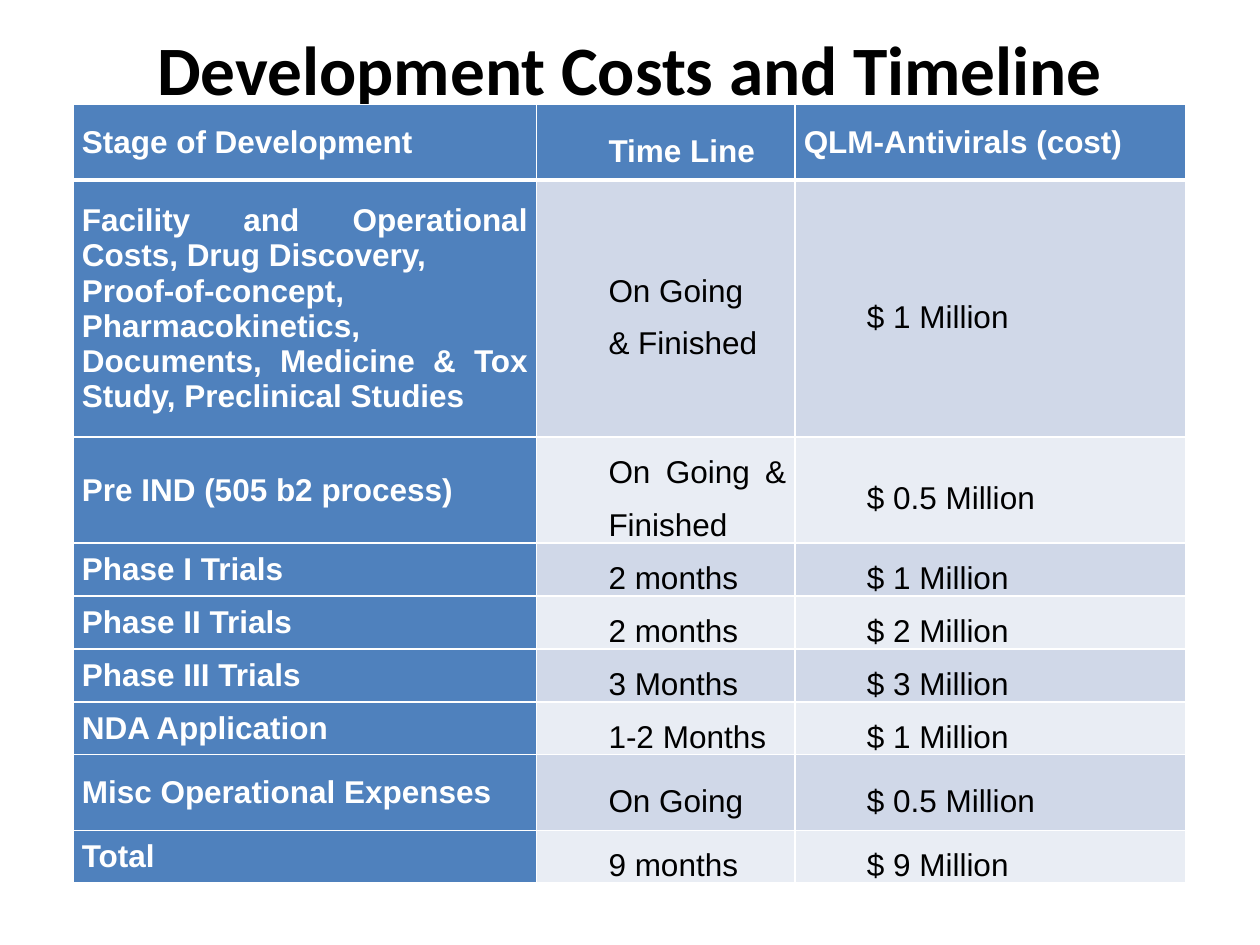
import lxml.etree
import pptx
import pptx.dml.color
import pptx.enum.text
import pptx.oxml.ns
import pptx.util

Inches = pptx.util.Inches
Pt = pptx.util.Pt
RGBColor = pptx.dml.color.RGBColor
ALIGN = pptx.enum.text.PP_ALIGN
MIDDLE = pptx.enum.text.MSO_ANCHOR.MIDDLE
qn = pptx.oxml.ns.qn

BLUE = RGBColor(0x4F, 0x81, 0xBD)
BANDS = [RGBColor(0xE9, 0xED, 0xF4), RGBColor(0xD0, 0xD8, 0xE8)]
WHITE = RGBColor(255, 255, 255)
BLACK = RGBColor(0, 0, 0)

HEADING = "Development Costs and Timeline"
HEADER = ("Stage of Development", "Time Line", "QLM-Antivirals (cost)")
STAGES = [
    ("Facility and Operational Costs, Drug Discovery,\nProof-of-concept,\n"
     "Pharmacokinetics,\nDocuments, Medicine & Tox Study, Preclinical Studies",
     "On Going\n& Finished", "$ 1 Million"),
    ("Pre IND (505 b2 process)", "On Going & Finished", "$ 0.5 Million"),
    ("Phase I Trials", "2 months", "$ 1 Million"),
    ("Phase II Trials", "2 months", "$ 2 Million"),
    ("Phase III Trials", "3 Months", "$ 3 Million"),
    ("NDA Application", "1-2 Months", "$ 1 Million"),
    ("Misc Operational Expenses", "On Going", "$ 0.5 Million"),
    ("Total", "9 months", "$ 9 Million"),
]
COLUMN_WIDTHS = [3.68, 2.05, 3.1]
ROW_HEIGHT = 0.3
TALL_ROWS = {0: 0.6, 1: 2.04, 7: 0.6}
HEADER_BORDERS = {"a:lnL": 1, "a:lnR": 1, "a:lnT": 1, "a:lnB": 3}
STAGE, TIMELINE, COST = range(3)


def add_header_borders(cell):
    properties = cell._tc.get_or_add_tcPr()
    for position, (side, width) in enumerate(HEADER_BORDERS.items()):
        border = lxml.etree.Element(qn(side), w=str(Pt(width)))
        fill = lxml.etree.SubElement(border, qn("a:solidFill"))
        lxml.etree.SubElement(fill, qn("a:srgbClr"), val=str(WHITE))
        properties.insert(position, border)


def fill_cell(cell, text, row, column):
    emphasized = row == 0 or column == STAGE
    indented = column == TIMELINE or (column == COST and row > 0)
    cell.fill.solid()
    cell.fill.fore_color.rgb = BLUE if emphasized else BANDS[row % 2]
    cell.vertical_anchor = MIDDLE
    cell.margin_left = cell.margin_right = Inches(0.07)
    cell.margin_top = cell.margin_bottom = 0
    cell.text = text
    for paragraph in cell.text_frame.paragraphs:
        paragraph.alignment = ALIGN.LEFT if row == column == 0 else ALIGN.JUSTIFY
        paragraph.font.name = "Arial"
        paragraph.font.size = Pt(18)
        paragraph.font.bold = emphasized
        paragraph.font.color.rgb = WHITE if emphasized else BLACK
        if indented:
            paragraph.line_spacing = 1.5
            paragraph._p.get_or_add_pPr().set("marL", str(Inches(0.5)))
            if column == COST:
                paragraph.space_after = Pt(10)
    if row == 0:
        add_header_borders(cell)


def main():
    deck = pptx.Presentation()
    deck.slide_width, deck.slide_height = Inches(10), Inches(7.5)
    slide = deck.slides.add_slide(deck.slide_layouts[5])

    title = slide.shapes.title
    title.left, title.top = Inches(0.5), Inches(0.15)
    title.width, title.height = Inches(9), Inches(0.78)
    title.text_frame.text = HEADING
    title.text_frame.vertical_anchor = MIDDLE
    heading = title.text_frame.paragraphs[0]
    heading.alignment = ALIGN.CENTER
    heading.font.name = "Calibri"
    heading.font.size = Pt(39.6)
    heading.font.bold = True
    heading.font.color.rgb = BLACK

    rows = [HEADER] + STAGES
    frame = slide.shapes.add_table(
        len(rows), len(HEADER), Inches(0.58), Inches(0.83),
        Inches(sum(COLUMN_WIDTHS)), Inches(6.06))
    costs = frame.table
    costs.first_col = True
    for column, width in enumerate(COLUMN_WIDTHS):
        costs.columns[column].width = Inches(width)
    for row, texts in enumerate(rows):
        costs.rows[row].height = Inches(TALL_ROWS.get(row, ROW_HEIGHT))
        for column, text in enumerate(texts):
            fill_cell(costs.cell(row, column), text, row, column)
    frame.height = Inches(6.06)

    deck.save("out.pptx")


if __name__ == "__main__":
    main()
